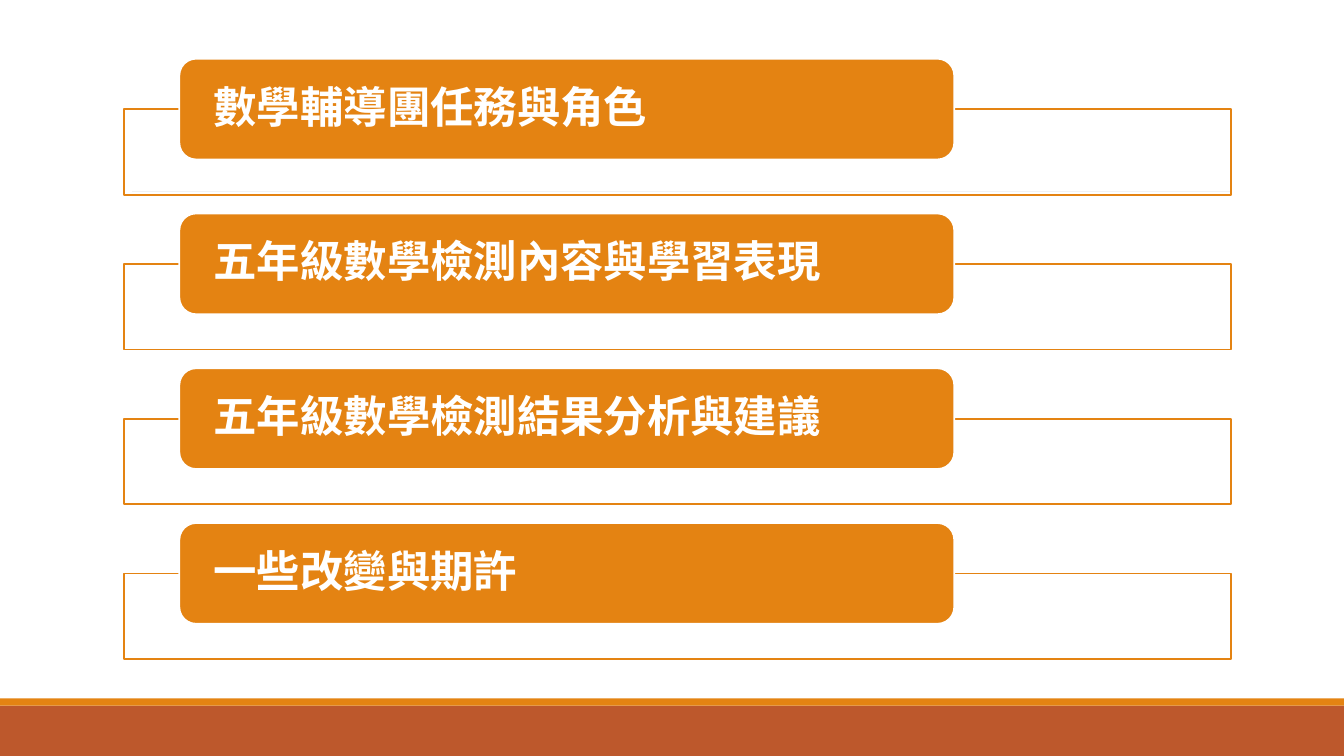
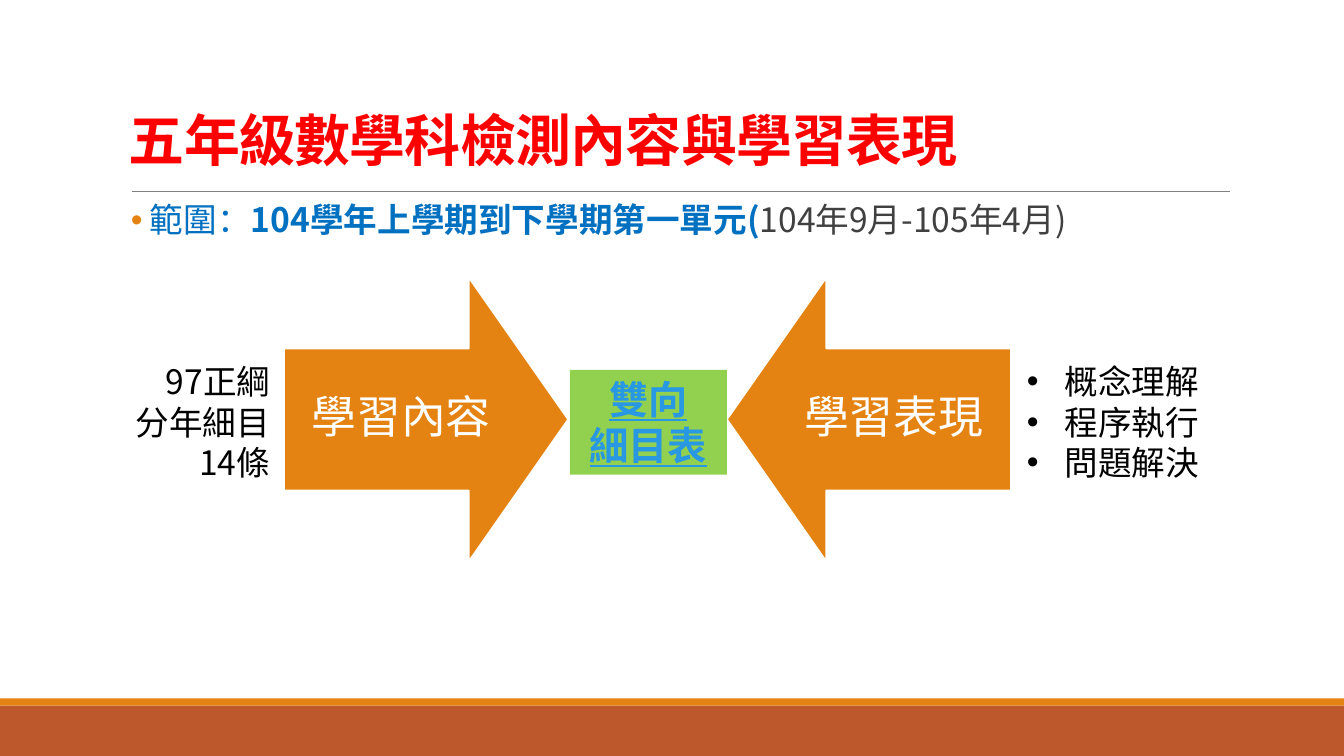
from dataclasses import dataclass

from lxml import etree
from pptx import Presentation
from pptx import util as u
from pptx.dml import color as c
from pptx.enum import shapes as s
from pptx.enum import text as t
from pptx.oxml import ns


@dataclass(frozen=True)
class Theme:
    font: str = "Noto Sans CJK SC"
    latin: str = "Calibri"
    accent: str = "E48312"
    footer: str = "BD582C"
    rule: str = "808080"
    white: str = "FFFFFF"
    black: str = "000000"
    heading: str = "FF0000"
    emphasis: str = "0070C0"
    body: str = "404040"
    hub: str = "92D050"
    hub_text: str = "2998E3"
    title_size: float = 40
    arrow_size: float = 32
    agenda_size: float = 31
    hub_size: float = 28
    body_size: float = 24
    outline: float = 1.25


def cm(*lengths):
    return [u.Cm(length) for length in lengths]


def rgb(value):
    return c.RGBColor.from_string(value)


def child(parent, tag, **attributes):
    return etree.SubElement(parent, ns.qn(tag), attributes)


class Deck:
    def __init__(self, theme):
        self.theme = theme
        self.file = Presentation()
        self.file.slide_width, self.file.slide_height = cm(33.87, 19.05)
        self.slide = None

    def add_slide(self, layout):
        self.slide = self.file.slides.add_slide(self.file.slide_layouts[layout])
        self.shape(s.MSO_SHAPE.RECTANGLE, (0, 17.78, 33.87, 1.27), self.theme.footer)
        self.shape(s.MSO_SHAPE.RECTANGLE, (0, 17.6, 33.87, 0.18), self.theme.accent)
        rule = self.slide.shapes.add_connector(
            s.MSO_CONNECTOR.STRAIGHT, *cm(3.33, 4.83, 30.99, 4.83))
        rule.line.color.rgb = rgb(self.theme.rule)
        rule.line.width = u.Pt(0.5)
        child(rule.element.spPr, "a:effectLst")

    def shape(self, kind, box, fill, line=None, opacity=None):
        shape = self.slide.shapes.add_shape(kind, *cm(*box))
        shape.shadow.inherit = False
        shape.fill.solid()
        shape.fill.fore_color.rgb = rgb(fill)
        if opacity:
            tone = shape.element.spPr.find(".//" + ns.qn("a:srgbClr"))
            child(tone, "a:alpha", val=str(opacity * 1000))
        if line:
            shape.line.color.rgb = rgb(line)
            shape.line.width = u.Pt(self.theme.outline)
        else:
            shape.line.fill.background()
        return shape

    def frame(self, shape, anchor, margins):
        frame = shape.text_frame
        frame.word_wrap = True
        frame.auto_size = t.MSO_AUTO_SIZE.NONE
        frame.vertical_anchor = anchor
        (frame.margin_left, frame.margin_top,
         frame.margin_right, frame.margin_bottom) = cm(*margins)
        return frame

    def run(self, paragraph, words, size, color, bold=False, underline=None, latin=None):
        run = paragraph.add_run()
        run.text = words
        font = run.font
        font.size, font.bold, font.underline = u.Pt(size), bold, underline
        font.color.rgb = rgb(color)
        font.name = latin or self.theme.font
        east_asian = etree.Element(ns.qn("a:ea"), typeface=self.theme.font)
        font._element.find(ns.qn("a:latin")).addnext(east_asian)
        return run

    def bullet(self, paragraph, indent, color):
        props = paragraph._p.get_or_add_pPr()
        props.set("marL", str(u.Cm(indent)))
        props.set("indent", str(-u.Cm(indent)))
        child(child(props, "a:buClr"), "a:srgbClr", val=color)
        child(props, "a:buFont", typeface="Arial")
        child(props, "a:buChar", char="•")

    def lines(self, frame, texts, align, spacing, indent=None, **style):
        for index, words in enumerate(texts):
            paragraph = frame.paragraphs[0] if index == 0 else frame.add_paragraph()
            paragraph.alignment = align
            paragraph.line_spacing = spacing
            if indent:
                self.bullet(paragraph, indent, style["color"])
            self.run(paragraph, words, **style)

    def title(self, words):
        heading = self.slide.shapes.title
        heading.left, heading.top, heading.width, heading.height = cm(3, 0.46, 27.94, 4.04)
        frame = self.frame(heading, t.MSO_ANCHOR.BOTTOM, (0.25, 0.13, 0.25, 0.13))
        paragraph = frame.paragraphs[0]
        paragraph.alignment = t.PP_ALIGN.LEFT
        paragraph.line_spacing = 0.85
        run = self.run(paragraph, words, self.theme.title_size, self.theme.heading, True)
        run.font._element.set("spc", "-50")

    def body(self, parts):
        scope = self.slide.placeholders[1]
        scope.left, scope.top, scope.width, scope.height = cm(3.3, 5, 27.86, 12.47)
        frame = self.frame(scope, t.MSO_ANCHOR.TOP, (0, 0.13, 0, 0.13))
        paragraph = frame.paragraphs[0]
        self.bullet(paragraph, 0.48, self.theme.accent)
        paragraph.line_spacing = 0.9
        paragraph.space_before, paragraph.space_after = u.Pt(12), u.Pt(2)
        for words, color, bold in parts:
            self.run(paragraph, words, self.theme.body_size, color, bold)

    def agenda_item(self, top, words):
        theme = self.theme
        self.shape(s.MSO_SHAPE.RECTANGLE, (3.12, top + 1.27, 27.91, 2.16),
                   theme.white, theme.accent, 90)
        label = self.shape(s.MSO_SHAPE.ROUNDED_RECTANGLE, (4.52, top, 19.53, 2.54),
                           theme.accent, theme.white)
        frame = self.frame(label, t.MSO_ANCHOR.MIDDLE, (0.74, 0, 0.74, 0))
        self.lines(frame, [words], t.PP_ALIGN.LEFT, 0.9,
                   size=theme.agenda_size, color=theme.white, bold=True)

    def arrow(self, kind, left, words):
        theme = self.theme
        arrow = self.shape(kind, (left, 6.99, 7.16, 7.16), theme.accent, theme.white)
        arrow.adjustments[0], arrow.adjustments[1] = 0.5, 0.35
        frame = self.frame(arrow, t.MSO_ANCHOR.MIDDLE, (0.55,) * 4)
        self.lines(frame, [words], t.PP_ALIGN.CENTER, 0.9,
                   size=theme.arrow_size, color=theme.white)

    def hub(self, texts):
        theme = self.theme
        hub = self.shape(s.MSO_SHAPE.RECTANGLE, (14.36, 9.32, 3.96, 2.64), theme.hub)
        frame = self.frame(hub, t.MSO_ANCHOR.MIDDLE, (0.25, 0.13, 0.25, 0.13))
        self.lines(frame, texts, t.PP_ALIGN.CENTER, u.Pt(33), size=theme.hub_size,
                   color=theme.hub_text, bold=True, underline=True, latin=theme.latin)

    def side_list(self, left, texts, align, indent=None):
        notes = self.slide.shapes.add_textbox(*cm(left, 8.97, 6.17, 4.37))
        frame = self.frame(notes, t.MSO_ANCHOR.TOP, (0.25, 0.13, 0.25, 0.13))
        self.lines(frame, texts, align, u.Pt(28.8), indent,
                   size=self.theme.body_size, color=self.theme.black)


def main():
    theme = Theme()
    deck = Deck(theme)

    deck.add_slide(6)
    topics = ["數學輔導團任務與角色", "五年級數學檢測內容與學習表現",
              "五年級數學檢測結果分析與建議", "一些改變與期許"]
    for row, topic in enumerate(topics):
        deck.agenda_item(1.48 + 3.9 * row, topic)

    deck.add_slide(1)
    deck.title("五年級數學科檢測內容與學習表現")
    deck.body([("範圍：", theme.emphasis, False),
               ("104學年上學期到下學期第一單元(", theme.emphasis, True),
               ("104年9月-105年4月)", theme.body, False)])
    deck.arrow(s.MSO_SHAPE.RIGHT_ARROW, 7.16, "學習內容")
    deck.arrow(s.MSO_SHAPE.LEFT_ARROW, 18.32, "學習表現")
    deck.hub(["雙向", "細目表"])
    deck.side_list(0.89, ["97正綱", "分年細目", "14條"], t.PP_ALIGN.RIGHT)
    deck.side_list(25.63, ["概念理解", "程序執行", "問題解決"], t.PP_ALIGN.LEFT, 0.95)

    deck.file.save("out.pptx")


if __name__ == "__main__":
    main()
